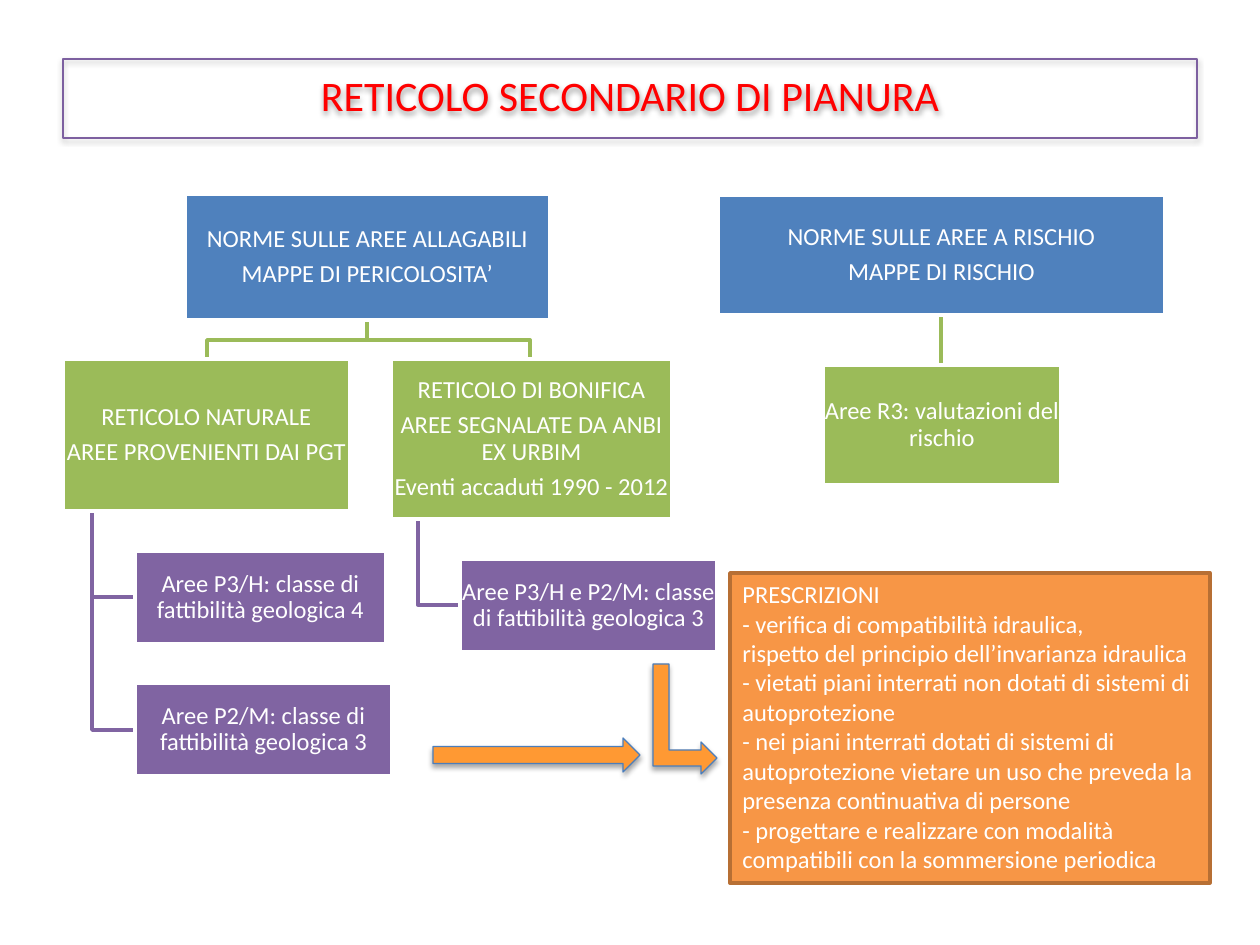
from dataclasses import dataclass

import lxml.etree
import pptx
import pptx.dml.color
import pptx.enum.shapes
import pptx.enum.text
import pptx.oxml.ns
import pptx.util

SCALE = 914400 / 126
FONT = "Calibri"
WHITE, RED = "FFFFFF", "FF0000"
BLUE, GREEN, PURPLE = "4F81BD", "9BBB59", "8064A2"
ORANGE, BROWN = "F79646", "B76F34"
AMBER, EDGE, FRAME = "FF9933", "4B7EBC", "7D60A0"
KIND = pptx.enum.shapes.MSO_SHAPE
ALIGN = pptx.enum.text.PP_ALIGN
ANCHOR = pptx.enum.text.MSO_ANCHOR


@dataclass
class Box:
    left: int
    top: int
    width: int
    height: int
    fill: str
    lines: list[str]


@dataclass
class Link:
    points: list[tuple[int, int]]
    color: str


@dataclass
class Arrow:
    kind: KIND
    left: int
    top: int
    width: int
    height: int
    turn: int


BOXES = [
    Box(185, 194, 365, 126, BLUE, ["NORME SULLE AREE ALLAGABILI", "MAPPE DI PERICOLOSITA’"]),
    Box(63, 359, 287, 152, GREEN, ["RETICOLO NATURALE", "AREE PROVENIENTI DAI PGT"]),
    Box(135, 551, 251, 93, PURPLE, ["Aree P3/H: classe di fattibilità geologica 4"]),
    Box(135, 683, 257, 93, PURPLE, ["Aree P2/M: classe di fattibilità geologica 3"]),
    Box(391, 359, 281, 160, GREEN, [
        "RETICOLO DI BONIFICA",
        "AREE SEGNALATE DA ANBI EX URBIM",
        "Eventi accaduti 1990 - 2012",
    ]),
    Box(460, 559, 257, 93, PURPLE, ["Aree P3/H e P2/M: classe di fattibilità geologica 3"]),
    Box(718, 195, 447, 120, BLUE, ["NORME SULLE AREE A RISCHIO", "MAPPE DI RISCHIO"]),
    Box(823, 365, 238, 120, GREEN, ["Aree R3: valutazioni del rischio"]),
]

LINKS = [
    Link([(418, 519), (418, 605), (460, 605)], PURPLE),
    Link([(367, 320), (367, 340), (530, 340), (530, 359)], GREEN),
    Link([(92, 511), (92, 730), (135, 730)], PURPLE),
    Link([(92, 511), (92, 597), (135, 597)], PURPLE),
    Link([(367, 320), (367, 340), (207, 340), (207, 359)], GREEN),
    Link([(941, 315), (941, 365)], GREEN),
]

RULES = Box(730, 573, 480, 310, ORANGE, [
    "PRESCRIZIONI",
    "- verifica di compatibilità idraulica,",
    "rispetto del principio dell’invarianza idraulica",
    "- vietati piani interrati non dotati di sistemi di autoprotezione",
    "- nei piani interrati dotati di sistemi di autoprotezione vietare un uso "
    "che preveda la presenza continuativa di persone",
    "- progettare e realizzare con modalità compatibili con la sommersione periodica",
])

ARROWS = [
    Arrow(KIND.BENT_UP_ARROW, 630, 687, 110, 64, 90),
    Arrow(KIND.RIGHT_ARROW, 433, 738, 207, 34, 0),
]


def px(count: int) -> pptx.util.Emu:
    return pptx.util.Emu(round(count * SCALE))


def tint(code: str) -> pptx.dml.color.RGBColor:
    return pptx.dml.color.RGBColor.from_string(code)


def stroke(shape, color: str, width: float) -> None:
    shape.line.color.rgb = tint(color)
    shape.line.width = pptx.util.Pt(width)


def paint(shape, fill: str, color: str, width: float) -> None:
    shape.shadow.inherit = False
    shape.fill.solid()
    shape.fill.fore_color.rgb = tint(fill)
    stroke(shape, color, width)


def shade(shape, alpha: int, dist: float) -> None:
    shape.shadow.inherit = False
    name = pptx.oxml.ns.qn
    effects = shape.element.spPr.find(name("a:effectLst"))
    outer = lxml.etree.SubElement(
        effects, name("a:outerShdw"), blurRad=str(pptx.util.Pt(3.1)),
        dist=str(pptx.util.Pt(dist)), dir="5400000", rotWithShape="0")
    color = lxml.etree.SubElement(outer, name("a:srgbClr"), val="000000")
    lxml.etree.SubElement(color, name("a:alpha"), val=str(alpha * 1000))


def style(par, size: int, color: str, align: ALIGN) -> None:
    par.alignment = align
    par.font.name = FONT
    par.font.size = pptx.util.Pt(size)
    par.font.color.rgb = tint(color)


def head(slide, text: str) -> None:
    title = slide.shapes.title
    title.left, title.top = px(63), px(59)
    title.width, title.height = px(1134), px(79)
    title.fill.background()
    stroke(title, FRAME, 0.75)
    shade(title, 38, 1.6)
    frame = title.text_frame
    frame.text = text
    frame.vertical_anchor = ANCHOR.MIDDLE
    frame.margin_bottom = px(14)
    style(frame.paragraphs[0], 24, RED, ALIGN.CENTER)


def place(slide, box: Box, edge: str, align: ALIGN):
    shape = slide.shapes.add_shape(
        KIND.RECTANGLE, px(box.left), px(box.top), px(box.width), px(box.height))
    paint(shape, box.fill, edge, 2)
    frame = shape.text_frame
    frame.word_wrap = True
    frame.text = "\n".join(box.lines)
    for par in frame.paragraphs:
        style(par, 14, WHITE, align)
    return frame


def node(slide, box: Box) -> None:
    frame = place(slide, box, WHITE, ALIGN.CENTER)
    frame.vertical_anchor = ANCHOR.MIDDLE
    frame.margin_left = frame.margin_right = px(1)
    frame.margin_top = frame.margin_bottom = px(1)
    for par in frame.paragraphs:
        par.line_spacing = 0.9
        par.space_after = pptx.util.Pt(5)


def join(slide, link: Link) -> None:
    start, *rest = link.points
    if len(rest) == 1:
        ends = [px(value) for value in (*start, *rest[0])]
        shape = slide.shapes.add_connector(
            pptx.enum.shapes.MSO_CONNECTOR.STRAIGHT, *ends)
        lxml.etree.SubElement(shape.element.spPr, pptx.oxml.ns.qn("a:effectLst"))
        stroke(shape, link.color, 2)
        return
    path = slide.shapes.build_freeform(*start, scale=SCALE)
    path.add_line_segments(rest, close=False)
    shape = path.convert_to_shape()
    shape.shadow.inherit = False
    shape.fill.background()
    stroke(shape, link.color, 2)


def point(slide, arrow: Arrow) -> None:
    shape = slide.shapes.add_shape(
        arrow.kind, px(arrow.left), px(arrow.top), px(arrow.width), px(arrow.height))
    shape.rotation = arrow.turn
    paint(shape, AMBER, EDGE, 0.75)
    shade(shape, 35, 1.8)


def main() -> None:
    deck = pptx.Presentation()
    deck.slide_width, deck.slide_height = px(1260), px(945)
    slide = deck.slides.add_slide(deck.slide_layouts[5])
    head(slide, "RETICOLO SECONDARIO DI PIANURA")
    for link in LINKS:
        join(slide, link)
    for box in BOXES:
        node(slide, box)
    place(slide, RULES, BROWN, ALIGN.LEFT).vertical_anchor = ANCHOR.TOP
    for arrow in ARROWS:
        point(slide, arrow)
    deck.save("out.pptx")


if __name__ == "__main__":
    main()
